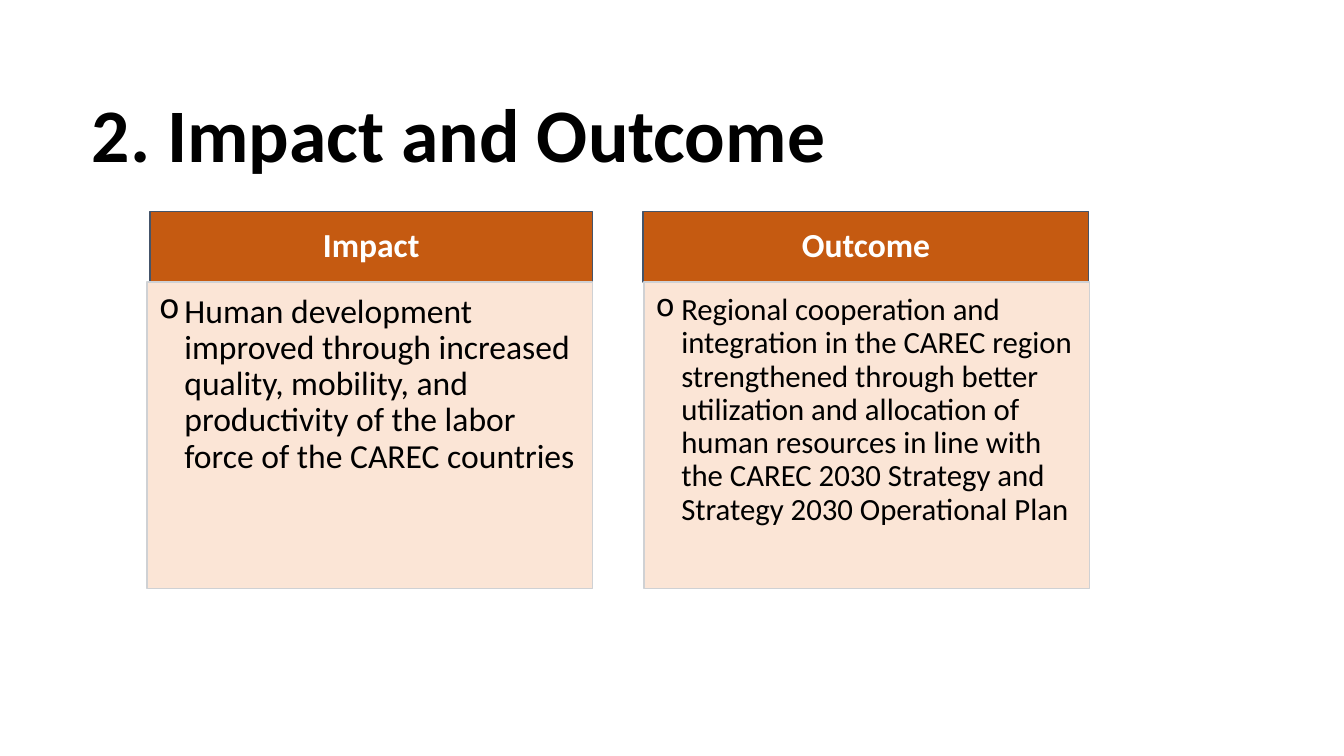
"""Build the Impact and Outcome slide with two headed panels."""
from dataclasses import dataclass

from lxml import etree
from pptx import Presentation
from pptx.dml.color import RGBColor
from pptx.enum.shapes import MSO_SHAPE
from pptx.enum.text import MSO_ANCHOR, MSO_AUTO_SIZE, PP_ALIGN
from pptx.oxml.ns import qn
from pptx.util import Cm, Pt

RECTANGLE = MSO_SHAPE.RECTANGLE
TOP, MIDDLE = MSO_ANCHOR.TOP, MSO_ANCHOR.MIDDLE
LEFT, CENTER = PP_ALIGN.LEFT, PP_ALIGN.CENTER


@dataclass(frozen=True)
class Theme:
    font: str = "Calibri"
    black: str = "000000"
    white: str = "FFFFFF"
    header_fill: str = "C55A11"
    header_line: str = "44546A"
    panel_fill: str = "FBE5D6"
    panel_line: str = "CFD1D4"
    title_size: int = 54
    header_size: int = 24


theme = Theme()


def write(shape, text, size, color, bold, align, anchor):
    """Put one formatted paragraph in a shape and return it."""
    frame = shape.text_frame
    frame.text = text
    frame.word_wrap = True
    frame.auto_size = MSO_AUTO_SIZE.NONE
    frame.vertical_anchor = anchor
    para = frame.paragraphs[0]
    para.alignment = align
    para.line_spacing = 0.9
    font = para.runs[0].font
    font.name, font.size, font.bold = theme.font, Pt(size), bold
    font.color.rgb = RGBColor.from_string(color)
    return para


def add_box(left, top, width, height, fill, line, insets):
    """Add an outlined rectangle; insets run left, top, right, bottom."""
    box = page.shapes.add_shape(RECTANGLE, Cm(left), Cm(top), Cm(width), Cm(height))
    box.shadow.inherit = False
    box.fill.solid()
    box.fill.fore_color.rgb = RGBColor.from_string(fill)
    box.line.color.rgb = RGBColor.from_string(line)
    box.line.width = Pt(1)
    frame = box.text_frame
    frame.margin_left, frame.margin_top, frame.margin_right, frame.margin_bottom = map(Cm, insets)
    return box


deck = Presentation()
deck.slide_width, deck.slide_height = Cm(33.87), Cm(19.05)
page = deck.slides.add_slide(deck.slide_layouts[5])

title = page.shapes.title
title.left, title.top, title.width, title.height = Cm(2.06), Cm(1.65), Cm(21.89), Cm(3.68)
write(title, "2. Impact and Outcome", theme.title_size, theme.black, True, LEFT, MIDDLE)

HEADER_TOP, HEADER_HEIGHT, PANEL_HEIGHT = 5.33, 1.78, 7.72
PANEL_WIDTH = 11.23
columns = [
    ("Impact", 3.78, 11.15, 3.71, 24,
     "Human development improved through increased quality, mobility, and "
     "productivity of the labor force of the CAREC countries"),
    ("Outcome", 16.21, 11.23, 16.23, 22,
     "Regional cooperation and integration in the CAREC region strengthened "
     "through better utilization and allocation of human resources in line with "
     "the CAREC 2030 Strategy and Strategy 2030 Operational Plan"),
]

for heading, header_left, header_width, panel_left, body_size, body in columns:
    header = add_box(header_left, HEADER_TOP, header_width, HEADER_HEIGHT,
                     theme.header_fill, theme.header_line, (0.41, 0.23, 0.41, 0.23))
    write(header, heading, theme.header_size, theme.white, True, CENTER, MIDDLE)

    panel = add_box(panel_left, HEADER_TOP + HEADER_HEIGHT, PANEL_WIDTH, PANEL_HEIGHT,
                    theme.panel_fill, theme.panel_line, (0.3, 0.3, 0.41, 0.43))
    para = write(panel, body, body_size, theme.black, False, LEFT, TOP)
    para.level = 1
    properties = para._p.get_or_add_pPr()
    properties.set("marL", str(Cm(0.64)))
    properties.set("indent", str(Cm(-0.64)))
    etree.SubElement(properties, qn("a:buChar")).set("char", "o")

deck.save("out.pptx")
